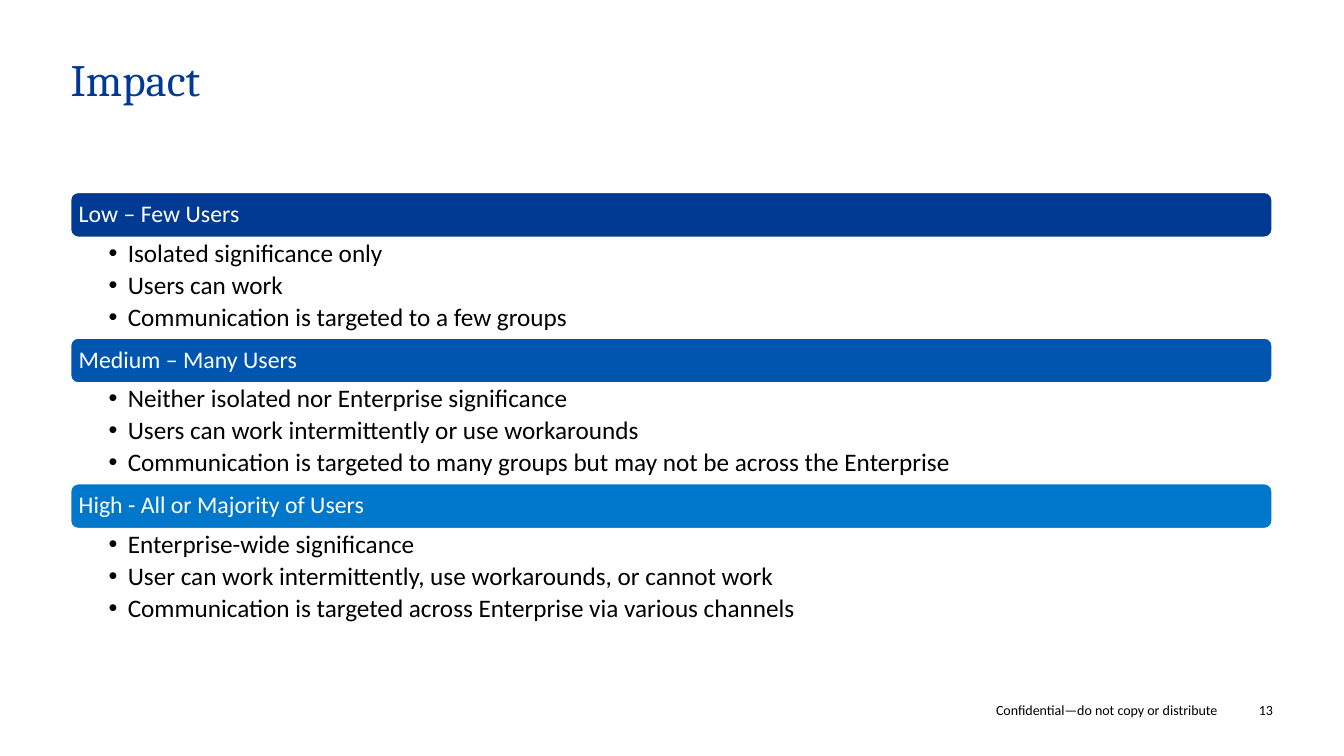
"""Build the slide on the three levels of user impact."""
from lxml import etree
from pptx import Presentation
from pptx.dml.color import RGBColor
from pptx.enum.shapes import MSO_SHAPE
from pptx.enum.text import MSO_ANCHOR, MSO_AUTO_SIZE, PP_ALIGN
from pptx.oxml.ns import qn
from pptx.util import Cm, Pt

ROUNDED = MSO_SHAPE.ROUNDED_RECTANGLE
TOP, MIDDLE, BOTTOM = MSO_ANCHOR.TOP, MSO_ANCHOR.MIDDLE, MSO_ANCHOR.BOTTOM
LEFT, RIGHT = PP_ALIGN.LEFT, PP_ALIGN.RIGHT
NO_AUTOFIT = MSO_AUTO_SIZE.NONE
COMPARISON_LAYOUT = 4

TITLE = "Impact"
LEVELS = [
    ("Low – Few Users", "003A93", [
        "Isolated significance only",
        "Users can work",
        "Communication is targeted to a few groups",
    ]),
    ("Medium – Many Users", "0056AE", [
        "Neither isolated nor Enterprise significance",
        "Users can work intermittently or use workarounds",
        "Communication is targeted to many groups but may not be across the Enterprise",
    ]),
    ("High - All or Majority of Users", "0077CA", [
        "Enterprise-wide significance",
        "User can work intermittently, use workarounds, or cannot work",
        "Communication is targeted across Enterprise via various channels",
    ]),
]
FOOTERS = [
    ("Confidential—do not copy or distribute", 9.27, 21.41),
    ("13", 31.12, 0.96),
]

MARGIN, WIDTH = 1.78, 30.28
TITLE_TOP, TITLE_HEIGHT = 1.45, 2.67
LEVELS_TOP, BAR_HEIGHT, LIST_HEIGHT = 4.85, 1.13, 2.54
FOOTER_TOP, FOOTER_HEIGHT = 17.68, 0.43
BULLET_INDENT = 0.48

TITLE_FORMAT = {"size": Pt(32), "name": "Cambria", "color": "003A93"}
BAR_FORMAT = {"size": Pt(17), "name": "Calibri", "color": "FFFFFF"}
LIST_FORMAT = {"size": Pt(18), "name": "Calibri", "color": "000000", "bold": False}
FOOTER_FORMAT = {"size": Pt(10), "name": "Calibri", "color": "000000"}


def rgb(value):
    return RGBColor.from_string(value)


def place(shape, left, top, width, height):
    box = {"left": left, "top": top, "width": width, "height": height}
    for name, value in box.items():
        setattr(shape, name, Cm(value))


def add_bullet(paragraph):
    properties = paragraph._p.get_or_add_pPr()
    properties.set("marL", str(Cm(BULLET_INDENT)))
    properties.set("indent", str(-Cm(BULLET_INDENT)))
    etree.SubElement(properties, qn("a:buFont")).set("typeface", "Arial")
    etree.SubElement(properties, qn("a:buChar")).set("char", "•")


def write(shape, lines, font_format, anchor=TOP, align=LEFT, insets=(0, 0, 0, 0),
          spacing=0.9, after=0, bullets=False):
    frame = shape.text_frame
    frame.text = "\n".join(lines)
    sides = ("margin_left", "margin_top", "margin_right", "margin_bottom")
    settings = {"word_wrap": True, "auto_size": NO_AUTOFIT, "vertical_anchor": anchor}
    settings.update(zip(sides, map(Cm, insets)))
    for name, value in settings.items():
        setattr(frame, name, value)
    paragraph_format = {"alignment": align, "line_spacing": spacing,
                        "space_before": Pt(0), "space_after": Pt(after)}
    for paragraph in frame.paragraphs:
        if bullets:
            paragraph.level = 1
            add_bullet(paragraph)
        for name, value in paragraph_format.items():
            setattr(paragraph, name, value)
        for name, value in font_format.items():
            if name == "color":
                paragraph.font.color.rgb = rgb(value)
            else:
                setattr(paragraph.font, name, value)


def add_bar(slide, heading, color, top):
    bar = slide.shapes.add_shape(ROUNDED, Cm(MARGIN), Cm(top), Cm(WIDTH), Cm(BAR_HEIGHT))
    bar.shadow.inherit = False
    bar.fill.solid()
    bar.fill.fore_color.rgb = rgb(color)
    bar.line.color.rgb = rgb("FFFFFF")
    bar.line.width = Pt(1)
    write(bar, [heading], BAR_FORMAT, anchor=MIDDLE, insets=(0.15, 0.1, 0.15, 0.1))


def main():
    presentation = Presentation()
    presentation.slide_width = Cm(33.87)
    presentation.slide_height = Cm(19.05)
    slide = presentation.slides.add_slide(presentation.slide_layouts[COMPARISON_LAYOUT])

    title, *bodies = slide.placeholders
    place(title, MARGIN, TITLE_TOP, WIDTH, TITLE_HEIGHT)
    write(title, [TITLE], TITLE_FORMAT)

    for index, ((heading, color, points), body) in enumerate(zip(LEVELS, bodies)):
        top = LEVELS_TOP + index * (BAR_HEIGHT + LIST_HEIGHT)
        add_bar(slide, heading, color, top)
        place(body, MARGIN, top + BAR_HEIGHT, WIDTH, LIST_HEIGHT)
        write(body, points, LIST_FORMAT, insets=(0.96, 0.08, 0.36, 0.08),
              after=3.4, bullets=True)
    for unused in bodies[len(LEVELS):]:
        unused.element.getparent().remove(unused.element)

    for text, left, width in FOOTERS:
        footer = slide.shapes.add_textbox(Cm(left), Cm(FOOTER_TOP), Cm(width), Cm(FOOTER_HEIGHT))
        write(footer, [text], FOOTER_FORMAT, anchor=BOTTOM, align=RIGHT, spacing=1.0)

    presentation.save("out.pptx")


if __name__ == "__main__":
    main()
